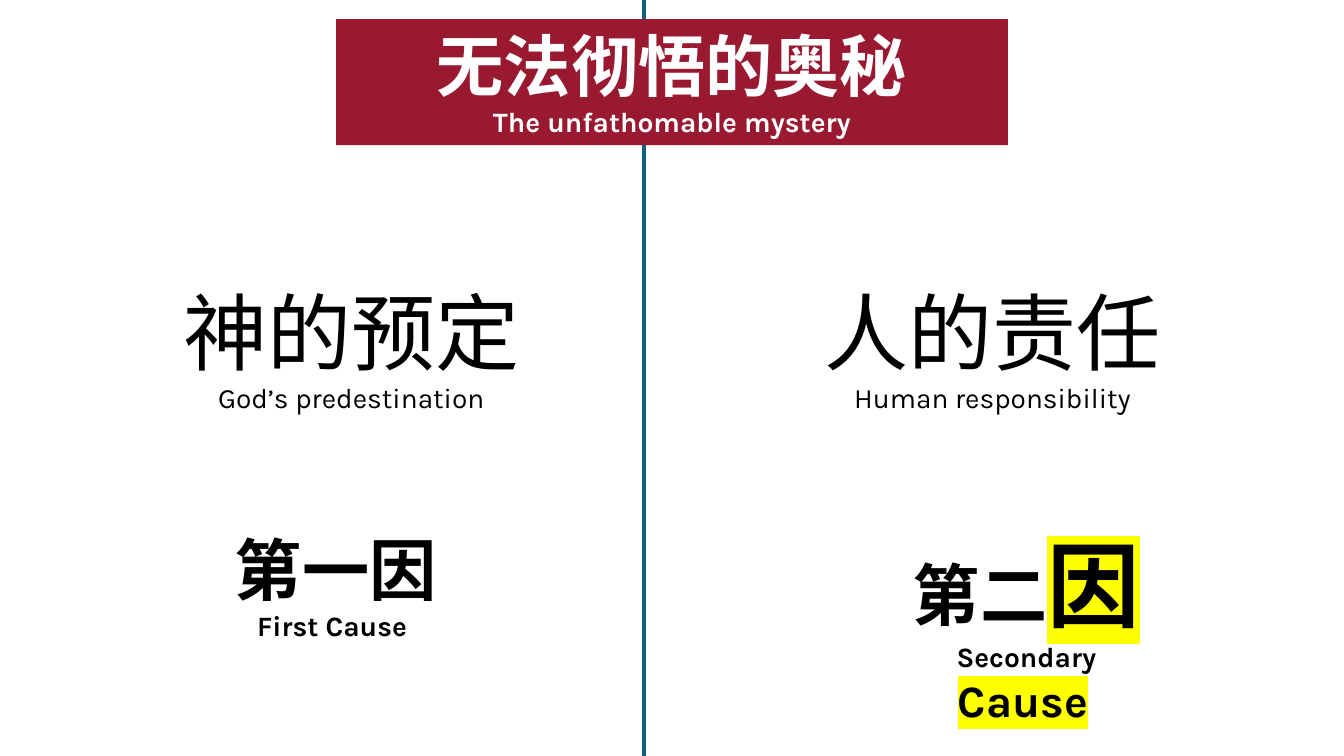
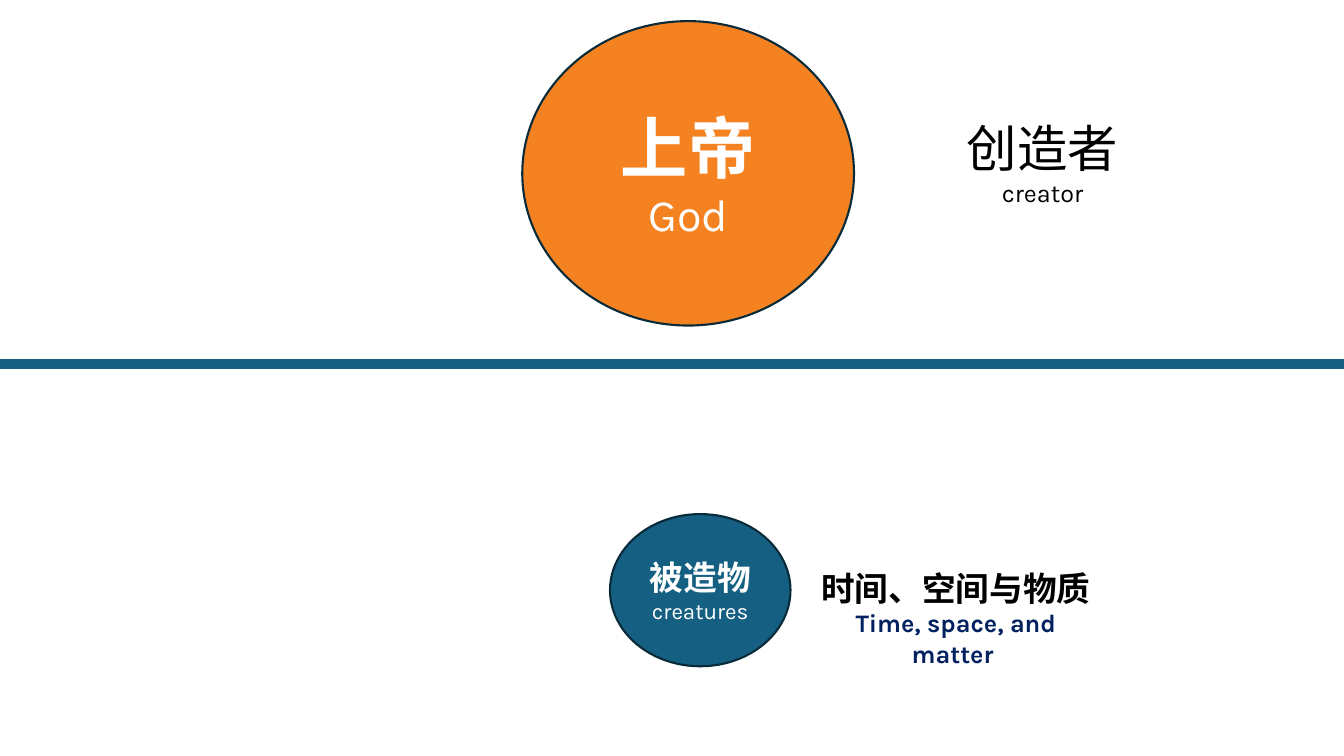
from collections import namedtuple

from lxml.etree import SubElement
from pptx import Presentation
from pptx.dml.color import RGBColor
from pptx.enum.lang import MSO_LANGUAGE_ID as Language
from pptx.enum.shapes import MSO_CONNECTOR as Connector, MSO_SHAPE as Shape
from pptx.enum.text import MSO_ANCHOR as Anchor, MSO_AUTO_SIZE as AutoSize, PP_ALIGN as Align
from pptx.oxml import parse_xml
from pptx.oxml.ns import nsdecls, qn
from pptx.util import Inches, Pt

COLORS = {
    "white": "FFFFFF",
    "black": "000000",
    "crimson": "991930",
    "teal": "156082",
    "outline": "092A39",
    "orange": "F48221",
    "navy": "002060",
    "yellow": "FFFF00",
}
FONT = "Karla"
WIDTH, HEIGHT = 13.33, 7.5
TITLE_ONLY, BLANK = 5, 6

Span = namedtuple("Span", "text size bold color marked", defaults=(False, "black", False))
BREAK = None


def rgb(name):
    return RGBColor.from_string(COLORS[name])


def inches(box):
    return [Inches(length) for length in box]


def add_span(para, span):
    run = para.add_run()
    run.text = span.text
    font = run.font
    font.size, font.bold, font.name = Pt(span.size), span.bold, FONT
    font.color.rgb = rgb(span.color)
    if not span.text.isascii():
        font.language_id = Language.SIMPLIFIED_CHINESE
    props = run._r.get_or_add_rPr()
    latin = props.find(qn("a:latin"))
    latin.addnext(parse_xml(f'<a:ea {nsdecls("a")} typeface="{FONT}"/>'))
    if span.marked:
        latin.addprevious(parse_xml(
            f'<a:highlight {nsdecls("a")}><a:srgbClr val="{COLORS["yellow"]}"/></a:highlight>'))


def write(shape, paragraphs, wrap=True, anchor=Anchor.TOP, grow=True):
    """Fill a shape with centred paragraphs, each a list of spans and breaks."""
    frame = shape.text_frame
    frame.word_wrap, frame.vertical_anchor = wrap, anchor
    frame.auto_size = AutoSize.SHAPE_TO_FIT_TEXT if grow else AutoSize.NONE
    for index, spans in enumerate(paragraphs):
        para = frame.add_paragraph() if index else frame.paragraphs[0]
        para.alignment = Align.CENTER
        for span in spans:
            if span is BREAK:
                para.add_line_break()
            else:
                add_span(para, span)


def add_label(page, box, paragraphs, wrap=True):
    write(page.shapes.add_textbox(*inches(box)), paragraphs, wrap)


def add_circle(page, box, fill, paragraphs):
    circle = page.shapes.add_shape(Shape.OVAL, *inches(box))
    circle.shadow.inherit = False
    circle.fill.solid()
    circle.fill.fore_color.rgb = rgb(fill)
    circle.line.color.rgb = rgb("outline")
    circle.line.width = Pt(1.5)
    write(circle, paragraphs, anchor=Anchor.MIDDLE, grow=False)


def add_divider(page, start, end, weight):
    line = page.shapes.add_connector(Connector.STRAIGHT, *inches(start + end))
    line.line.color.rgb = rgb("teal")
    line.line.width = Pt(weight)
    SubElement(line._element.spPr, qn("a:effectLst"))
    return line


def add_banner(page, box, paragraphs):
    banner = page.shapes.title
    banner.left, banner.top, banner.width, banner.height = inches(box)
    banner.fill.solid()
    banner.fill.fore_color.rgb = rgb("crimson")
    write(banner, paragraphs)
    return banner


def build_mystery(deck):
    page = deck.slides.add_slide(deck.slide_layouts[TITLE_ONLY])
    banner = add_banner(page, (WIDTH / 4, 0.19, WIDTH / 2, 1.25), [
        [Span("无法彻悟的奥秘", 48, True, "white")],
        [Span("The unfathomable mystery", 20, True, "white")],
    ])
    divider = add_divider(page, (6.39, 0), (6.39, HEIGHT), 3)
    banner._element.addprevious(divider._element)

    topics = [(1.7, "神的预定", "God’s predestination"),
              (8.06, "人的责任", "Human responsibility")]
    for left, chinese, english in topics:
        add_label(page, (left, 2.73, 3.57, 1.45),
                  [[Span(chinese, 60)], [Span(english, 20)]], wrap=False)

    causes = [
        (2.2, 2.26, 1.25, [Span("第一因", 48, True), BREAK, Span("First Cause ", 20, True)]),
        (8.72, 2.92, 1.75, [
            Span("第二", 48, True), Span("因", 66, True, marked=True), BREAK,
            Span("Secondary ", 20, True), Span("Cause", 32, True, marked=True),
            Span(" ", 20, True)]),
    ]
    for left, width, height, spans in causes:
        add_label(page, (left, 5.19, width, height), [spans])


def build_creation(deck):
    page = deck.slides.add_slide(deck.slide_layouts[BLANK])
    add_circle(page, (6.05, 5.1, 1.79, 1.51), "teal", [
        [Span("被造物", 24, True, "white")], [Span("creatures", 16, False, "white")]])
    add_label(page, (8.01, 5.58, 2.94, 0.81), [
        [Span("时间、空间与物质 ", 24, True)],
        [Span("Time, space, and matter ", 18, True, "navy")]])
    add_divider(page, (0, 3.61), (WIDTH, 3.61), 7)
    add_circle(page, (5.18, 0.21, 3.29, 3.02), "orange", [
        [Span("上帝", 48, True, "white")], [Span("God", 32, False, "white")]])
    add_label(page, (9.48, 1.11, 1.72, 1.01),
              [[Span("创造者", 36)], [Span("creator", 18)]], wrap=False)


def main():
    deck = Presentation()
    deck.slide_width, deck.slide_height = Inches(WIDTH), Inches(HEIGHT)
    build_mystery(deck)
    build_creation(deck)
    deck.save("out.pptx")


if __name__ == "__main__":
    main()
